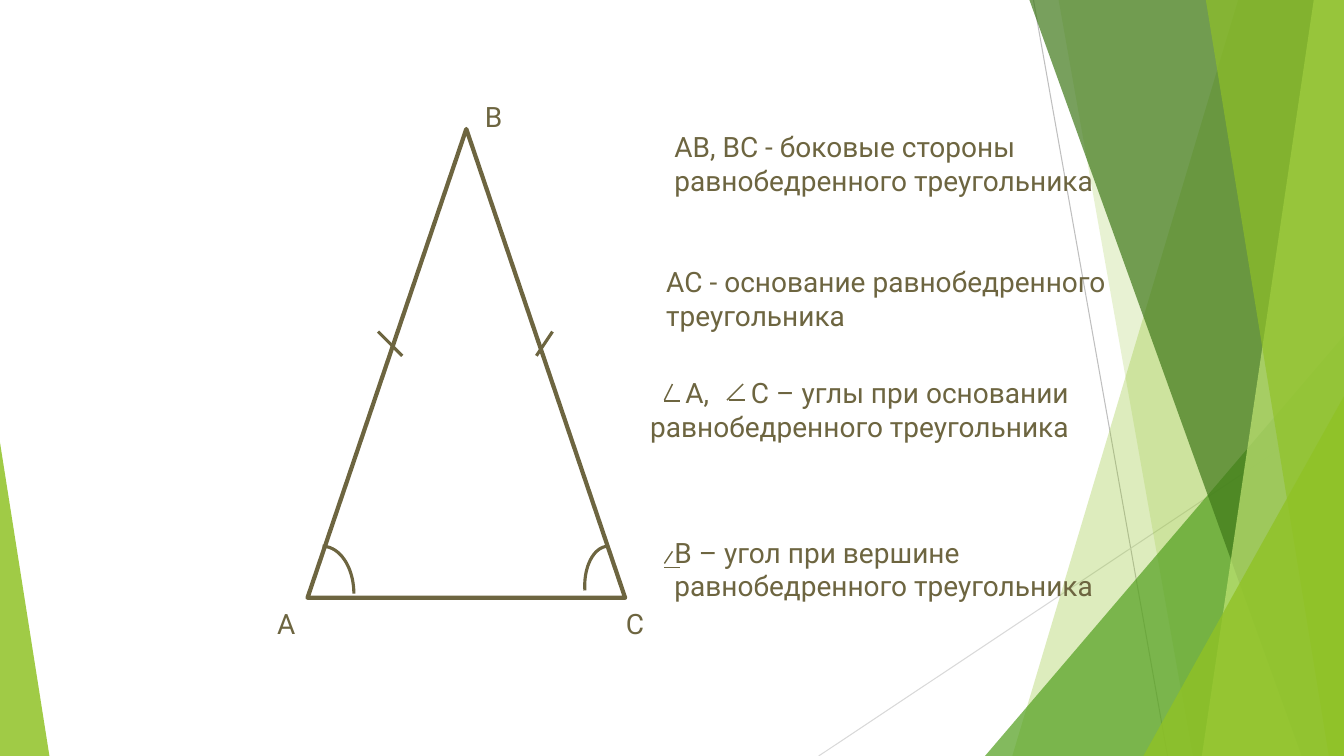
import math
import pptx
import pptx.util
import pptx.dml.color
import pptx.enum.shapes
import pptx.oxml
import pptx.oxml.ns

Inches = pptx.util.Inches
KIND = pptx.enum.shapes.MSO_SHAPE
WIDE, HIGH = 13.33, 7.5

THEME = {
    "font": "Roboto", "size": 20, "ink": "6D6540",
    "lime": "90C226", "leaf": "54A021", "moss": "3F7819", "pale": "C0E474",
    "grey": "BFBFBF", "mist": "D9D9D9",
}

# Labels and notes: text, left, top, width, height
TEXTS = [
    ("А", 2.65, 5.97, 0.87, 0.44),
    ("В", 4.71, 0.94, 0.63, 0.44),
    ("С", 6.11, 5.97, 1.1, 0.44),
    ("АВ, ВС - боковые стороны равнобедренного треугольника", 6.59, 1.24, 4.69, 0.77),
    ("А,\tС – углы при основании равнобедренного треугольника", 6.35, 3.68, 4.95, 0.77),
    ("АС - основание равнобедренного треугольника", 6.51, 2.58, 5.16, 0.77),
    ("В – угол при вершине равнобедренного треугольника", 6.59, 5.26, 5.08, 0.77),
]
SIGN_GAP, SIGN_TAB = 0.35, 0.86  # room for the two angle signs

# Background: top-left x, top-right x, bottom-left x of each band
RAYS = [(10.25, 0, 11.58, HIGH, "grey"), (WIDE, 4.03, 8.12, HIGH, "mist")]
BACK = [
    ("band", 12.28, 10.04, "lime", 30),
    ("band", 10.5, 11.83, "lime", 20),
    ("peak", 9.77, 3.33, 3.56, 1, "leaf", 72),
    ("band", 10.21, 12.91, "moss", 70),
    ("band", 13.03, 11.92, "pale", 70),
    ("band", 11.96, 13.18, "lime", 65),
    ("peak", 11.34, 3.93, 1.99, 1, "lime", 80),
    ("peak", 0, 4.39, 0.49, 0, "lime", 85),
]

# Drawing
SIDES = (3.05, 1.28, 3.15, 4.65)
TICKS = [(3.75, 3.29, 3.99, 3.53), (5.48, 3.29, 5.32, 3.53)]
# Arcs: centre x, y, radius x (negative bends left), radius y, sweep
ARCS = [(3.2, 5.89, 0.31, 0.47, 90), (6.03, 5.81, -0.23, 0.39, 97)]
SIGNS = [
    (6.67, 3.81, 6.59, 3.97), (6.59, 3.98, 6.74, 3.98),
    (7.37, 3.81, 7.21, 3.97), (7.23, 3.97, 7.39, 3.97),
    (6.67, 5.47, 6.59, 5.59), (6.59, 5.63, 6.74, 5.63),
]

deck = pptx.Presentation()
deck.slide_width, deck.slide_height = Inches(WIDE), Inches(HIGH)
slide = deck.slides.add_slide(deck.slide_layouts[6])
shapes = slide.shapes


def tint(name):
    return pptx.dml.color.RGBColor.from_string(THEME[name])


def add_xml(node, tag, **attrs):
    child = pptx.oxml.ns.qn("a:" + tag)
    child = node.makeelement(child, attrs)
    node.append(child)
    return child


def add_line(x1, y1, x2, y2, color, width):
    line = shapes.add_connector(
        pptx.enum.shapes.MSO_CONNECTOR.STRAIGHT,
        Inches(x1), Inches(y1), Inches(x2), Inches(y2))
    line.line.color.rgb = tint(color)
    line.line.width = pptx.util.Pt(width)
    add_xml(line._element.spPr, "effectLst")


def add_free(points, close):
    spots = [(Inches(x), Inches(y)) for x, y in points]
    pen = shapes.build_freeform(*spots[0])
    pen.add_line_segments(spots[1:], close=close)
    return pen.convert_to_shape()


def add_peak(left, top, width, height, tip):
    peak = shapes.add_shape(
        KIND.ISOSCELES_TRIANGLE,
        Inches(left), Inches(top), Inches(width), Inches(height))
    peak.adjustments[0] = tip
    return peak


def paint(shape, color, alpha):
    shape.shadow.inherit = False
    shape.fill.solid()
    shape.fill.fore_color.rgb = tint(color)
    shape.line.fill.background()
    fill = shape.fill._xPr.find(pptx.oxml.ns.qn("a:solidFill"))
    add_xml(fill[0], "alpha", val=str(alpha * 1000))


def trace(shape, width):
    shape.shadow.inherit = False
    shape.fill.background()
    shape.line.color.rgb = tint("ink")
    shape.line.width = pptx.util.Pt(width)


# Background facets
for *ends, color in RAYS:
    add_line(*ends, color, 0.75)
for kind, *place, color, alpha in BACK:
    if kind == "band":
        high, low = place
        facet = add_free([(high, 0), (WIDE, 0), (WIDE, HIGH), (low, HIGH)], True)
    else:
        left, top, width, tip = place
        facet = add_peak(left, top, width, HIGH - top, tip)
    paint(facet, color, alpha)

# Triangle with equal sides and equal angles
trace(add_peak(*SIDES, 0.5), 3)
for tick in TICKS:
    add_line(*tick, "ink", 2.25)
STEPS = 24
for mid_x, mid_y, rad_x, rad_y, sweep in ARCS:
    turns = [math.radians(sweep * step / STEPS) for step in range(STEPS + 1)]
    curve = [(mid_x + rad_x * math.sin(turn), mid_y - rad_y * math.cos(turn))
             for turn in turns]
    trace(add_free(curve, False), 2.25)

# Labels and notes
for text, *place in TEXTS:
    frame = shapes.add_textbox(*map(Inches, place)).text_frame
    frame.word_wrap = True
    para = frame.paragraphs[0]
    para.text = text
    if "\t" in text:
        props = para._p.get_or_add_pPr()
        props.set("marL", "0")
        props.set("indent", str(Inches(SIGN_GAP)))
        tabs = add_xml(props, "tabLst")
        add_xml(tabs, "tab", pos=str(Inches(SIGN_TAB)), algn="l")
    for run in para.runs:
        run.font.name = THEME["font"]
        run.font.size = pptx.util.Pt(THEME["size"])
        run.font.color.rgb = tint("ink")

# Angle signs
for sign in SIGNS:
    add_line(*sign, "ink", 1)

deck.save("out.pptx")
